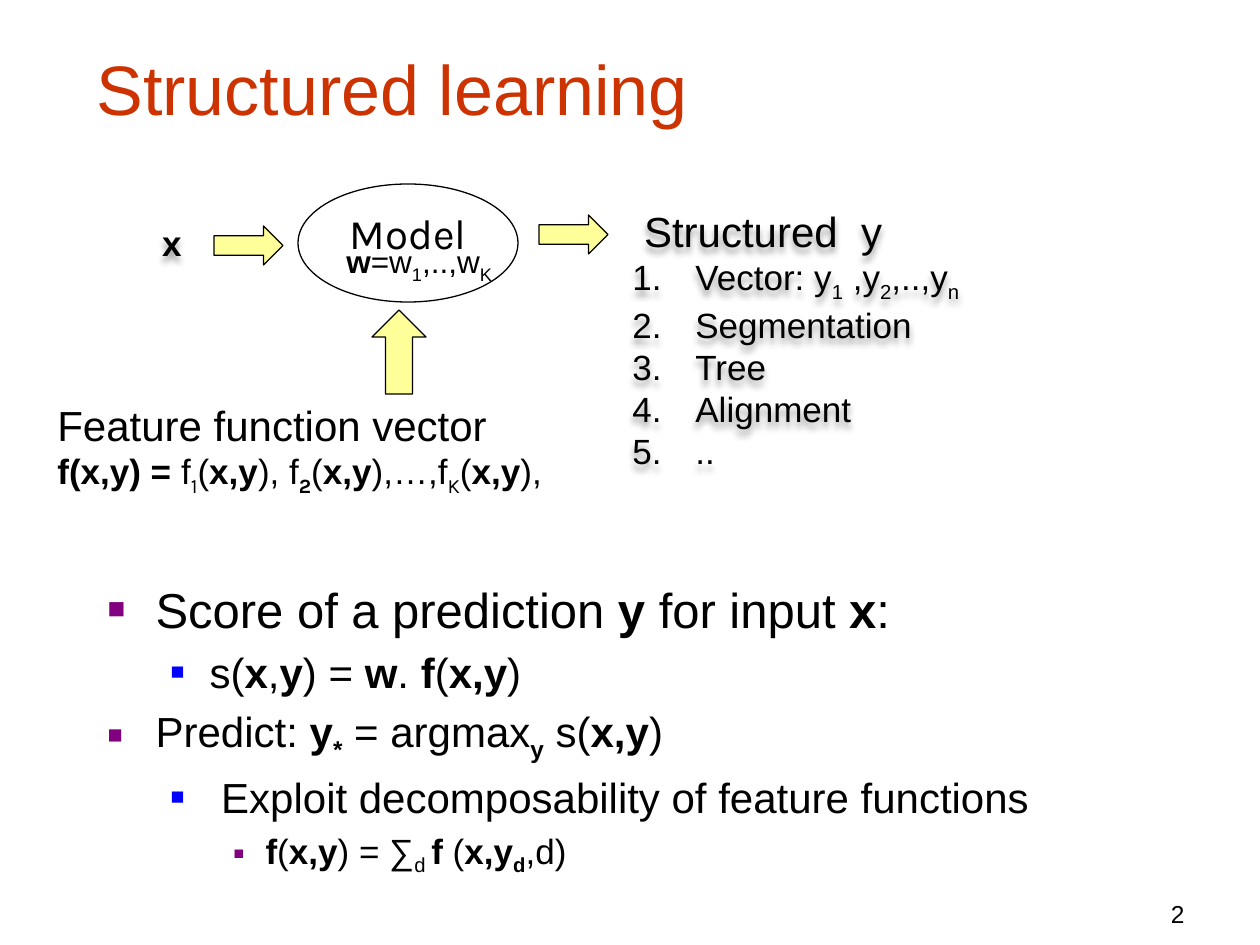
"""Build the structured learning slide."""
from dataclasses import dataclass
from typing import NamedTuple

from lxml import etree
from pptx import Presentation
from pptx import util as u
from pptx.dml.color import RGBColor
from pptx.enum import shapes, text
from pptx.oxml import parse_xml
from pptx.oxml.ns import qn

SCALE = 914400 / 126
BLACK, RED, YELLOW = "000000", "CC3300", "FFFF99"
PURPLE, BLUE = "800080", "0000FF"
NS = 'xmlns:a="http://schemas.openxmlformats.org/drawingml/2006/main"'


class Box(NamedTuple):
    x: int
    y: int
    w: int
    h: int


class Bit(NamedTuple):
    """A run; style holds b for bold, s for subscript, k for Karla."""
    text: str
    style: str = ""


@dataclass
class Line:
    bits: list[Bit]
    size: int
    left: int = 0
    hang: int = 0
    level: int = 0
    mark: str = ""
    ratio: int = 100
    gap: int = 0
    number: bool = False


@dataclass
class Arrow:
    kind: shapes.MSO_SHAPE
    box: Box


def px(n: int) -> int:
    return int(n * SCALE)


def paint(tint: str) -> RGBColor:
    return RGBColor.from_string(tint)


def place(shape, box: Box) -> None:
    shape.left, shape.top, shape.width, shape.height = map(px, box)


def style(font, size: int, tint: str = BLACK, name: str = "Arial") -> None:
    font.size, font.name = u.Pt(size), name
    font.color.rgb = paint(tint)


def bullet(para, line: Line) -> None:
    """Set the indent and the square or number of a paragraph."""
    props = para._p.get_or_add_pPr()
    props.set("marL", str(px(line.left)))
    props.set("indent", str(-px(line.hang)))
    if line.number:
        etree.SubElement(props, qn("a:buAutoNum"), type="arabicPeriod")
    elif line.mark:
        tint = etree.SubElement(props, qn("a:buClr"))
        etree.SubElement(tint, qn("a:srgbClr"), val=line.mark)
        etree.SubElement(props, qn("a:buSzPct"), val=str(line.ratio * 1000))
        etree.SubElement(props, qn("a:buFont"), typeface="Arial")
        etree.SubElement(props, qn("a:buChar"), char="■")


def write(frame, lines: list[Line]) -> None:
    """Fill a text frame with lines of styled runs."""
    for i, line in enumerate(lines):
        para = frame.paragraphs[0] if i == 0 else frame.add_paragraph()
        para.level = line.level
        para.space_before = u.Pt(line.gap)
        bullet(para, line)
        for bit in line.bits:
            run = para.add_run()
            run.text = bit.text
            style(run.font, line.size, name="Karla" if "k" in bit.style else "Arial")
            run.font.bold = "b" in bit.style
            if "s" in bit.style:
                run._r.get_or_add_rPr().set("baseline", "-25000")


def label(slide, box: Box, lines: list[Line], shade: bool = False):
    """Add a wrapped text box, with a soft shadow if asked."""
    item = slide.shapes.add_textbox(*map(px, box))
    item.text_frame.word_wrap = True
    write(item.text_frame, lines)
    if shade:
        item._element.spPr.append(parse_xml(
            f'<a:effectLst {NS}><a:outerShdw blurRad="50800" dist="38100" dir="5400000">'
            '<a:srgbClr val="000000"><a:alpha val="40000"/></a:srgbClr>'
            '</a:outerShdw></a:effectLst>'))
    return item


def solid(slide, kind: shapes.MSO_SHAPE, box: Box, fill: str = ""):
    """Add an outlined shape, filled if a colour is given."""
    item = slide.shapes.add_shape(kind, *map(px, box))
    item.shadow.inherit = False
    if fill:
        item.fill.solid()
        item.fill.fore_color.rgb = paint(fill)
    else:
        item.fill.background()
    item.line.color.rgb = paint(BLACK)
    item.line.width = u.Pt(0.75)
    return item


XY = Bit("x,y", "b")
TOP = dict(left=48, hang=48, mark=PURPLE, ratio=60)
SUB = dict(left=102, hang=39, level=1, mark=BLUE, ratio=55, gap=5)
BODY = [
    Line([Bit("Score of a prediction "), Bit("y", "b"), Bit(" for input "),
          Bit("x", "b"), Bit(":")], 28, **TOP),
    Line([Bit("s("), Bit("x", "b"), Bit(","), Bit("y", "b"), Bit(") = "),
          Bit("w", "b"), Bit(". "), Bit("f", "b"), Bit("("), XY, Bit(")")], 24, **SUB),
    Line([Bit("Predict: "), Bit("y", "b"), Bit("*", "bs"), Bit(" = argmax"),
          Bit("y", "bs"), Bit(" s("), XY, Bit(")")], 24, level=1, gap=5, **TOP),
    Line([Bit(" Exploit decomposability of feature functions")], 24, **SUB),
    Line([Bit("f", "b"), Bit("("), XY, Bit(") = ∑"), Bit("d ", "s"), Bit("f ", "b"),
          Bit("("), XY, Bit("d", "bs"), Bit(",d)")],
         20, 158, 32, 2, PURPLE, 50, 4),
]
VECTOR = [Bit("Vector: y"), Bit("1", "s"), Bit(" ,y"), Bit("2", "s"),
          Bit(",..,y"), Bit("n", "s")]
KINDS = [VECTOR] + [[Bit(word)] for word in ("Segmentation", "Tree", "Alignment", "..")]
OUTPUT = [Line([Bit(" Structured  y")], 24)] + [
    Line(bits, 20, 63, 63, number=True) for bits in KINDS]
FEATURES = [
    Line([Bit("Feature function vector")], 24),
    Line([Bit("f(x,y) = ", "b"), Bit("f"), Bit("1", "ks"), Bit("("), XY, Bit("), f"),
          Bit("2", "kbs"), Bit("("), XY, Bit("),…,f"), Bit("K", "ks"), Bit("("), XY,
          Bit("),")], 20),
]
WEIGHTS = [Line([Bit("w", "b"), Bit("=w"), Bit("1", "s"), Bit(",..,w"), Bit("K", "s")], 18)]
ARROWS = [
    Arrow(shapes.MSO_SHAPE.RIGHT_ARROW, Box(214, 226, 69, 39)),
    Arrow(shapes.MSO_SHAPE.RIGHT_ARROW, Box(539, 215, 69, 39)),
    Arrow(shapes.MSO_SHAPE.UP_ARROW, Box(372, 310, 54, 84)),
]


def main() -> None:
    deck = Presentation()
    deck.slide_width, deck.slide_height = px(1260), px(945)
    slide = deck.slides.add_slide(deck.slide_layouts[1])

    title, body = slide.shapes.title, slide.placeholders[1]
    place(title, Box(84, 42, 1126, 94))
    title.text_frame.text = "Structured learning"
    title.text_frame.vertical_anchor = text.MSO_ANCHOR.BOTTOM
    title.text_frame.auto_size = text.MSO_AUTO_SIZE.NONE
    head = title.text_frame.paragraphs[0]
    head.alignment = text.PP_ALIGN.LEFT
    style(head.runs[0].font, 40, RED)

    place(body, Box(95, 499, 1139, 330))
    body.text_frame.auto_size = text.MSO_AUTO_SIZE.NONE
    body.text_frame.margin_top = px(80)
    write(body.text_frame, BODY)

    page = label(slide, Box(935, 872, 262, 63), [Line([Bit("2")], 14)])
    page.text_frame.vertical_anchor = text.MSO_ANCHOR.BOTTOM
    page.text_frame.paragraphs[0].alignment = text.PP_ALIGN.RIGHT

    label(slide, Box(140, 215, 79, 55), [Line([Bit(" "), Bit("x", "b")], 20)], True)
    model = solid(slide, shapes.MSO_SHAPE.OVAL, Box(298, 184, 220, 118))
    model.text_frame.vertical_anchor = text.MSO_ANCHOR.TOP
    write(model.text_frame, [Line([Bit("Model", "k")], 24)])
    model.text_frame.paragraphs[0].alignment = text.PP_ALIGN.CENTER
    label(slide, Box(620, 199, 571, 276), OUTPUT, True)
    for arrow in ARROWS:
        solid(slide, arrow.kind, arrow.box, YELLOW)
    label(slide, Box(45, 393, 567, 106), FEATURES)
    label(slide, Box(334, 236, 280, 79), WEIGHTS)
    deck.save("out.pptx")


if __name__ == "__main__":
    main()
